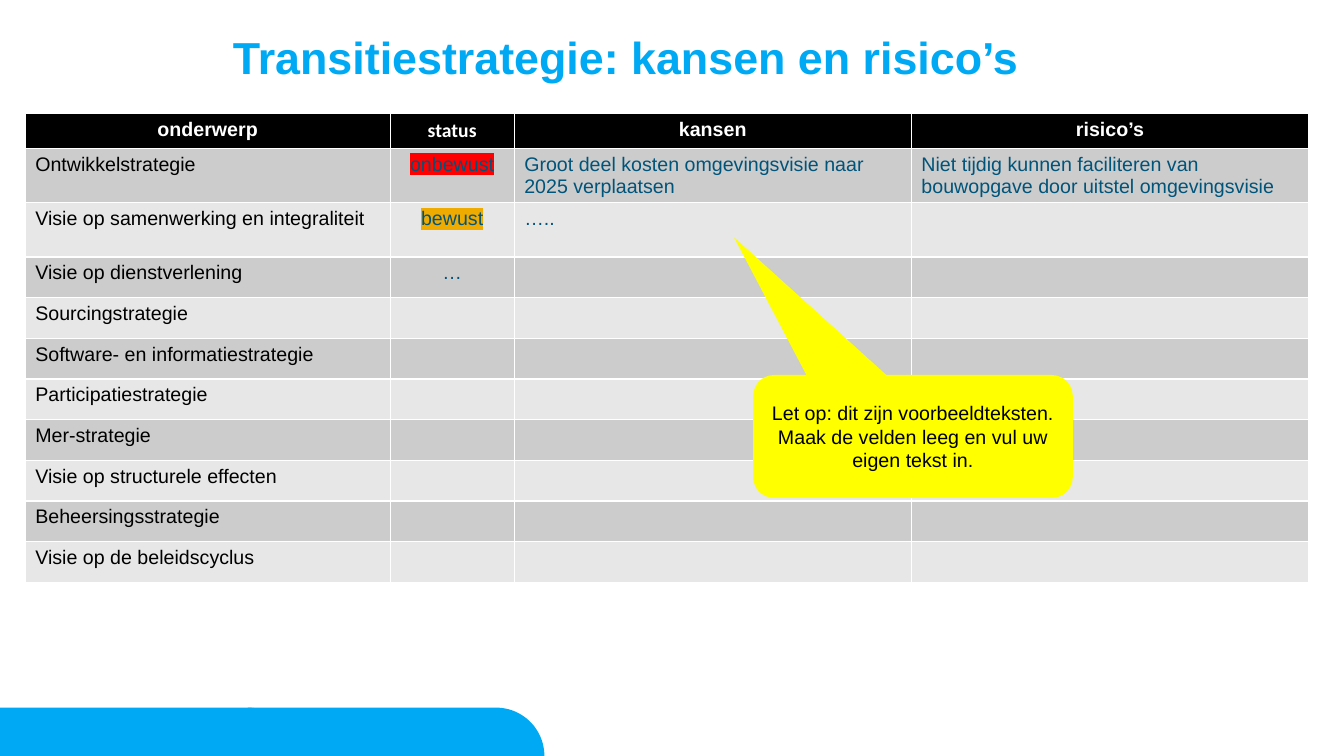
from math import cos, pi, sin

from lxml import etree
from pptx import Presentation
from pptx.dml.color import RGBColor
from pptx.enum.shapes import MSO_SHAPE
from pptx.enum.text import MSO_ANCHOR, MSO_AUTO_SIZE, PP_ALIGN
from pptx.oxml.ns import qn
from pptx.util import Inches, Pt

LEFT, CENTER = PP_ALIGN.LEFT, PP_ALIGN.CENTER
TOP, MIDDLE = MSO_ANCHOR.TOP, MSO_ANCHOR.MIDDLE
NO_FIT = MSO_AUTO_SIZE.NONE
CALLOUT = MSO_SHAPE.ROUNDED_RECTANGULAR_CALLOUT

BLUE = RGBColor(0x00, 0xA9, 0xF3)
TEAL = RGBColor(0x00, 0x54, 0x7A)
BLACK = RGBColor(0x00, 0x00, 0x00)
WHITE = RGBColor(0xFF, 0xFF, 0xFF)
DARK = RGBColor(0xCC, 0xCC, 0xCC)
LIGHT = RGBColor(0xE7, 0xE7, 0xE7)
RED = RGBColor(0xFF, 0x00, 0x00)
AMBER = RGBColor(0xF0, 0xAB, 0x00)
YELLOW = RGBColor(0xFF, 0xFF, 0x00)

HEADS = ["onderwerp", "status", "kansen", "risico’s"]
ROWS = [
    ["Ontwikkelstrategie", "onbewust",
     "Groot deel kosten omgevingsvisie naar 2025 verplaatsen",
     "Niet tijdig kunnen faciliteren van bouwopgave door uitstel omgevingsvisie"],
    ["Visie op samenwerking en integraliteit", "bewust", "…..", ""],
    ["Visie op dienstverlening", "…", "", ""],
] + [[topic, "", "", ""] for topic in (
    "Sourcingstrategie",
    "Software- en informatiestrategie",
    "Participatiestrategie",
    "Mer-strategie",
    "Visie op structurele effecten",
    "Beheersingsstrategie",
    "Visie op de beleidscyclus",
)]
MARKS = {"onbewust": RED, "bewust": AMBER}
WIDTHS = [3.62, 1.23, 3.94, 3.94]
HEAD_H, TALL_H = 0.34, 0.54


def style(para, size, color, align, bold=False, face="Arial"):
    para.alignment = align
    font = para.font
    font.name, font.size, font.bold = face, Pt(size), bold
    font.color.rgb = color


def mark(run, color):
    """Highlight the run's background."""
    light = etree.SubElement(run.font._element, qn("a:highlight"))
    etree.SubElement(light, qn("a:srgbClr"), val=str(color))


def add_title(slide, x, y, w, h):
    title = slide.shapes.title
    title.left, title.top, title.width, title.height = map(Inches, (x, y, w, h))
    frame = title.text_frame
    frame.text = "Transitiestrategie: kansen en risico’s"
    frame.auto_size, frame.vertical_anchor = NO_FIT, TOP
    frame.margin_left = frame.margin_right = 0
    frame.margin_top = frame.margin_bottom = 0
    para = frame.paragraphs[0]
    para.line_spacing = 0.9
    style(para, 32, BLUE, LEFT, bold=True)


def add_tab(slide, x, y, w, h):
    """Bar whose top right corner is a quarter circle as high as the bar."""
    steps = 24
    turns = [pi / 2 * (1 - i / steps) for i in range(steps + 1)]
    arc = [(x + w - h + h * cos(t), y + h - h * sin(t)) for t in turns]
    path = slide.shapes.build_freeform(
        Inches(x), Inches(y + h), scale=1.0)
    path.add_line_segments(
        [(Inches(px), Inches(py)) for px, py in [(x, y)] + arc], close=True)
    tab = path.convert_to_shape()
    tab.shadow.inherit = False
    tab.fill.solid()
    tab.fill.fore_color.rgb = BLUE
    tab.line.fill.background()


def fill_cell(cell, text, row, col):
    cell.fill.solid()
    cell.fill.fore_color.rgb = (
        BLACK if row == 0 else DARK if row % 2 else LIGHT)
    para = cell.text_frame.paragraphs[0]
    align = CENTER if row == 0 or col == 1 else LEFT
    if row == 0:
        face = "Calibri" if col == 1 else "Arial"
        style(para, 14, WHITE, align, bold=True, face=face)
    else:
        style(para, 14, TEAL if col else BLACK, align)
    if text:
        run = para.add_run()
        run.text = text
        if text in MARKS:
            mark(run, MARKS[text])


def add_grid(slide, x, y, w, h):
    data = [HEADS] + ROWS
    table = slide.shapes.add_table(
        len(data), len(HEADS), *map(Inches, (x, y, w, h))).table
    for col, width in zip(table.columns, WIDTHS):
        col.width = Inches(width)
    plain = (h - HEAD_H - 2 * TALL_H) / (len(data) - 3)
    heights = [HEAD_H, TALL_H, TALL_H] + [plain] * (len(data) - 3)
    for r, (texts, height) in enumerate(zip(data, heights)):
        table.rows[r].height = Inches(height)
        for c, text in enumerate(texts):
            fill_cell(table.cell(r, c), text, r, c)


def add_note(slide, x, y, w, h):
    note = slide.shapes.add_shape(CALLOUT, *map(Inches, (x, y, w, h)))
    for i, value in enumerate((-0.56, -1.62, 0.17)):
        note.adjustments[i] = value
    note.shadow.inherit = False
    note.fill.solid()
    note.fill.fore_color.rgb = YELLOW
    note.line.fill.background()
    frame = note.text_frame
    frame.word_wrap, frame.vertical_anchor = True, MIDDLE
    frame.text = ("Let op: dit zijn voorbeeldteksten. Maak de velden leeg "
                  "en vul uw eigen tekst in.")
    style(frame.paragraphs[0], 14, BLACK, CENTER)


def main():
    deck = Presentation()
    deck.slide_width, deck.slide_height = Inches(13.33), Inches(7.5)
    slide = deck.slides.add_slide(deck.slide_layouts[5])
    for i in range(2):
        add_tab(slide, 2.46 * i, 7.02, 2.94, 0.48)
    add_title(slide, 2.31, 0.35, 7.99, 0.79)
    add_grid(slide, 0.25, 1.13, sum(WIDTHS), 4.65)
    add_note(slide, 7.47, 3.72, 3.17, 1.22)
    deck.save("out.pptx")


if __name__ == "__main__":
    main()
